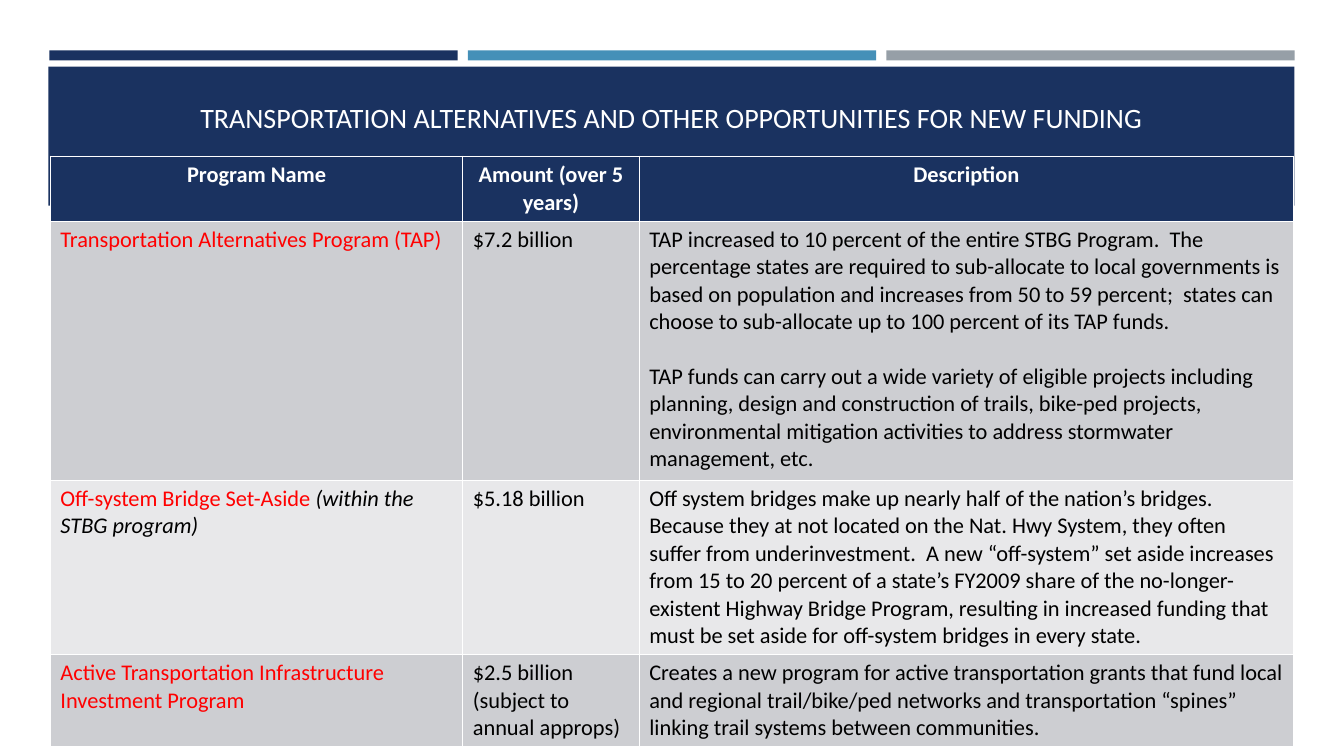
"""Builds a slide listing transportation funding programs in a table."""
from pptx import Presentation
from pptx.dml.color import RGBColor
from pptx.enum import shapes, text
from pptx.util import Inches, Pt

NAVY = RGBColor(0x1A, 0x32, 0x60)
BLUE = RGBColor(0x45, 0x90, 0xB8)
GRAY = RGBColor(0x96, 0x9F, 0xA7)
DARK_BAND = RGBColor(0xCD, 0xCE, 0xD2)
LIGHT_BAND = RGBColor(0xE8, 0xE8, 0xEA)
WHITE = RGBColor(0xFF, 0xFF, 0xFF)
BLACK = RGBColor(0, 0, 0)
RED = RGBColor(0xFF, 0, 0)
FONT = "Calibri"

COLUMN_WIDTHS = [4.09, 1.75, 6.49]
ROW_HEIGHTS = [0.62, 2.57, 1.7, 0.45]
ROWS = [
    ["Program Name", "Amount (over 5 years)", "Description"],
    ["Transportation Alternatives Program (TAP)", "$7.2 billion",
     "TAP increased to 10 percent of the entire STBG Program.  The percentage states are "
     "required to sub-allocate to local governments is based on population and increases "
     "from 50 to 59 percent;  states can choose to sub-allocate up to 100 percent of its "
     "TAP funds.\n"
     "TAP funds can carry out a wide variety of eligible projects including planning, "
     "design and construction of trails, bike-ped projects, environmental mitigation "
     "activities to address stormwater management, etc."],
    ["Off-system Bridge Set-Aside ", "$5.18 billion",
     "Off system bridges make up nearly half of the nation’s bridges.  Because they at not "
     "located on the Nat. Hwy System, they often suffer from underinvestment.  A new "
     "“off-system” set aside increases from 15 to 20 percent of a state’s FY2009 share of "
     "the no-longer-existent Highway Bridge Program, resulting in increased funding that "
     "must be set aside for off-system bridges in every state."],
    ["Active Transportation Infrastructure Investment Program",
     "$2.5 billion (subject to annual approps)",
     "Creates a new program for active transportation grants that fund local and regional "
     "trail/bike/ped networks and transportation “spines” linking trail systems between "
     "communities."],
]

deck = Presentation()
deck.slide_width, deck.slide_height = Inches(13.33), Inches(7.5)
page = deck.slides.add_slide(deck.slide_layouts.get_by_name("Title Only"))

bars = [(0.49 + 4.15 * index, 0.5, 4.05, 0.1, color)
        for index, color in enumerate([NAVY, BLUE, GRAY])]
for left, top, width, height, color in bars + [(0.48, 0.66, 12.36, 1.38, NAVY)]:
    bar = page.shapes.add_shape(shapes.MSO_SHAPE.RECTANGLE, Inches(left), Inches(top),
                                Inches(width), Inches(height))
    bar.shadow.inherit = False
    bar.fill.solid()
    bar.fill.fore_color.rgb = color
    bar.line.fill.background()

title = page.shapes.title
page.shapes._spTree.append(title._element)
title.left, title.top = Inches(0.63), Inches(0.8)
title.width, title.height = Inches(12.06), Inches(0.58)
title.text_frame.text = "TRANSPORTATION ALTERNATIVES AND OTHER OPPORTUNITIES FOR NEW FUNDING"
title.text_frame.auto_size = text.MSO_AUTO_SIZE.NONE
title.text_frame.vertical_anchor = text.MSO_ANCHOR.BOTTOM
heading = title.text_frame.paragraphs[0]
heading.alignment = text.PP_ALIGN.CENTER
heading.font.name, heading.font.size = FONT, Pt(20)
heading.font.color.rgb = WHITE

programs = page.shapes.add_table(len(ROWS), len(COLUMN_WIDTHS), Inches(0.5), Inches(1.55),
                                 Inches(sum(COLUMN_WIDTHS)), Inches(sum(ROW_HEIGHTS))).table
for column, width in zip(programs.columns, COLUMN_WIDTHS):
    column.width = Inches(width)
for row, height in zip(programs.rows, ROW_HEIGHTS):
    row.height = Inches(height)

for row_index, row in enumerate(ROWS):
    is_header = row_index == 0
    band = NAVY if is_header else DARK_BAND if row_index % 2 else LIGHT_BAND
    for column_index, wording in enumerate(row):
        cell = programs.cell(row_index, column_index)
        cell.fill.solid()
        cell.fill.fore_color.rgb = band
        cell.text = wording
        for para_index, para in enumerate(cell.text_frame.paragraphs):
            para.alignment = text.PP_ALIGN.CENTER if is_header else text.PP_ALIGN.LEFT
            para.space_before = Pt(19.5 * para_index)
            para.font.name, para.font.size = FONT, Pt(16)
            para.font.bold = is_header
            color = WHITE if is_header else RED if column_index == 0 else BLACK
            para.font.color.rgb = color

span = programs.cell(2, 0).text_frame.paragraphs[0].add_run()
span.text = "(within the STBG program)"
span.font.italic = True
span.font.color.rgb = BLACK

deck.save("out.pptx")
